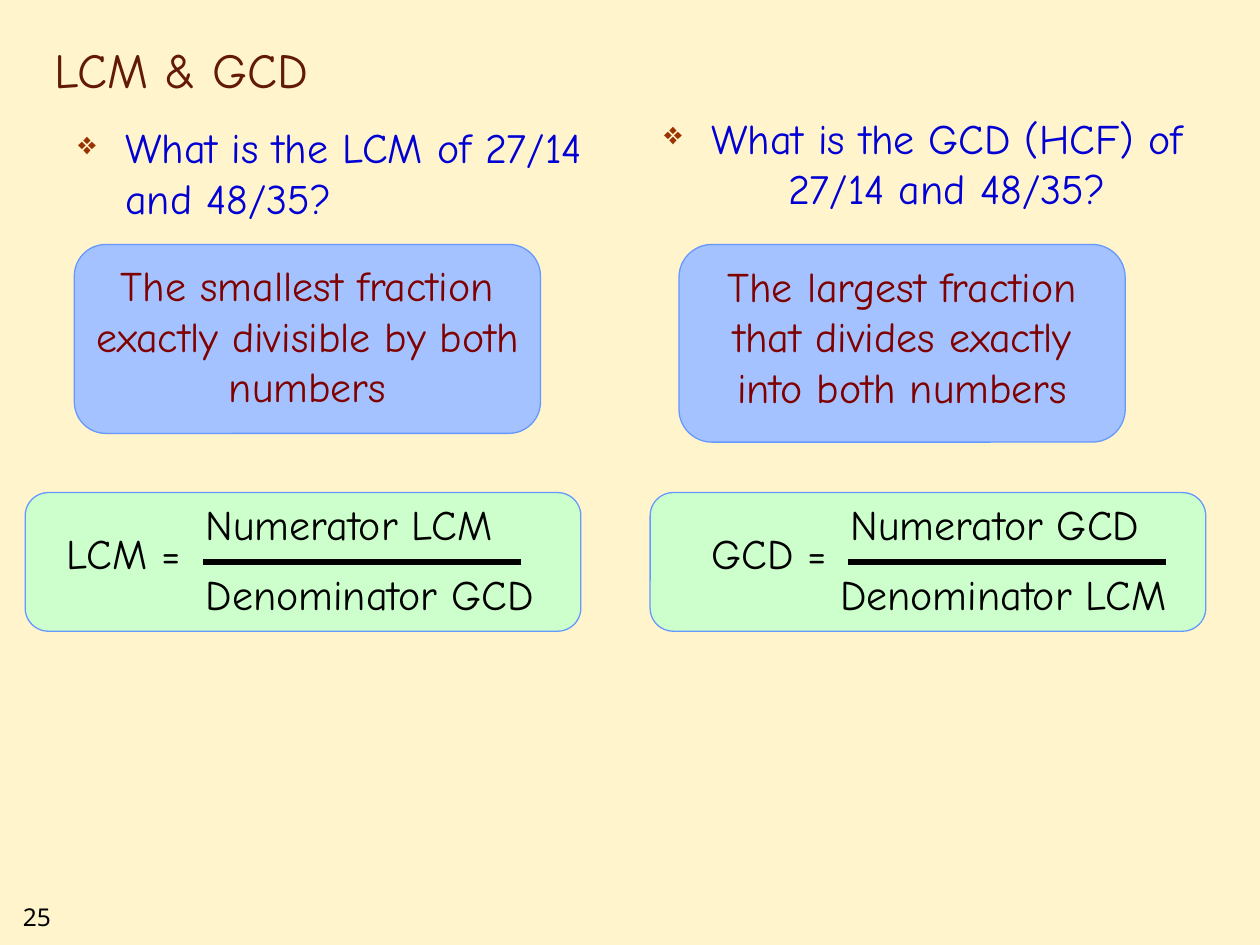
from lxml.etree import SubElement
from pptx import Presentation
from pptx.dml.color import RGBColor
from pptx.enum.shapes import MSO_CONNECTOR, MSO_SHAPE
from pptx.enum.text import MSO_ANCHOR, PP_ALIGN
from pptx.oxml.ns import qn
from pptx.util import Pt

BODY = {"name": "Comic Neue", "size": Pt(24)}
BLACK, BLUE, MAROON, BROWN = "000000", "0000D4", "800000", "631908"
DEFINITION_FILL, FORMULA_FILL, OUTLINE = "A3C2FF", "CCFFCC", "6699FF"
FORMULA_TOP, FORMULA_WIDTH, FORMULA_HEIGHT = 281.5, 317.5, 79.2


def color(hex_code):
    return RGBColor.from_string(hex_code)


def box(left, top, width, height):
    return [Pt(value) for value in (left, top, width, height)]


def set_background(slide, hex_code, opacity):
    fill = slide.background.fill
    fill.solid()
    fill.fore_color.rgb = color(hex_code)
    rgb = slide.background._cSld.find(".//" + qn("a:srgbClr"))
    SubElement(rgb, qn("a:alpha")).set("val", str(opacity * 1000))


def write(shape, text, hex_code, align=PP_ALIGN.LEFT, anchor=MSO_ANCHOR.TOP, **changes):
    frame = shape.text_frame
    frame.word_wrap = True
    frame.vertical_anchor = anchor
    paragraph = frame.paragraphs[0]
    paragraph.alignment = align
    run = paragraph.add_run()
    run.text = text
    run.font.color.rgb = color(hex_code)
    for name, value in {**BODY, **changes}.items():
        setattr(run.font, name, value)
    return paragraph


def add_text(shapes, place, text, hex_code, **options):
    return write(shapes.add_textbox(*box(*place)), text, hex_code, **options)


def add_question(shapes, place, text, align):
    paragraph = add_text(shapes, place, text, BLUE, align=align)
    paragraph.space_before = Pt(4.8)
    properties = paragraph._p.get_or_add_pPr()
    properties.set("marL", str(Pt(27)))
    properties.set("indent", str(Pt(-27)))
    bullet_color = SubElement(properties, qn("a:buClr"))
    SubElement(bullet_color, qn("a:srgbClr")).set("val", "993300")
    SubElement(properties, qn("a:buSzPct")).set("val", "75000")
    SubElement(properties, qn("a:buChar")).set("char", "❖")


def add_panel(shapes, place, fill):
    panel = shapes.add_shape(MSO_SHAPE.ROUNDED_RECTANGLE, *box(*place))
    panel.shadow.inherit = False
    panel.fill.solid()
    panel.fill.fore_color.rgb = color(fill)
    panel.line.color.rgb = color(OUTLINE)
    panel.line.width = Pt(0.75)
    return panel


def add_definition(shapes, place, text):
    write(add_panel(shapes, place, DEFINITION_FILL), text, MAROON, align=PP_ALIGN.CENTER)


def add_fraction_bar(shapes, left, y, width):
    bar = shapes.add_connector(MSO_CONNECTOR.STRAIGHT, Pt(left), Pt(y), Pt(left + width), Pt(y))
    bar.line.color.rgb = color(BLACK)
    bar.line.width = Pt(3)
    SubElement(bar._element.spPr, qn("a:effectLst"))


def add_formula(slide, panel_left, label_left, denominator_left, name, other):
    """Group a panel with 'name = Numerator name / Denominator other'."""
    shapes = slide.shapes.add_group_shape().shapes
    middle = FORMULA_TOP + FORMULA_HEIGHT / 2
    add_panel(shapes, (panel_left, FORMULA_TOP, FORMULA_WIDTH, FORMULA_HEIGHT), FORMULA_FILL)
    add_fraction_bar(shapes, label_left + 85, middle, 181.5)
    for left, top, width, text in (
        (label_left, middle - 23, 90.7, f"{name} ="),
        (label_left + 79.5, FORMULA_TOP, 193, f"Numerator {name}"),
        (denominator_left, middle, 221, f"Denominator {other}"),
    ):
        add_text(shapes, (left, top, width, 36), text, BLACK)


def main():
    presentation = Presentation()
    presentation.slide_width, presentation.slide_height = Pt(720), Pt(540)
    slide = presentation.slides.add_slide(presentation.slide_layouts[6])
    set_background(slide, "FFF2C0", 82)
    shapes = slide.shapes

    add_text(shapes, (6, 512, 54, 24.5), "25", BLACK, name="Noto Sans", size=Pt(14))
    add_text(shapes, (24, 12, 612, 48), "LCM & GCD", BROWN, anchor=MSO_ANCHOR.BOTTOM, size=Pt(28))

    add_question(shapes, (37.5, 66, 306, 147.6), "What is the LCM of 27/14 and 48/35?", PP_ALIGN.LEFT)
    add_question(shapes, (366, 60.5, 323, 79), "What is the GCD (HCF) of 27/14 and 48/35?", PP_ALIGN.CENTER)

    add_definition(shapes, (42.5, 139.7, 266.4, 108),
                   "The smallest fraction exactly divisible by both numbers")
    add_definition(shapes, (388, 139.7, 255, 113),
                   "The largest fraction that divides exactly into both numbers")

    add_formula(slide, 14.4, 31, 110.5, "LCM", "GCD")
    add_formula(slide, 371.5, 399.6, 473, "GCD", "LCM")

    presentation.save("out.pptx")


if __name__ == "__main__":
    main()
